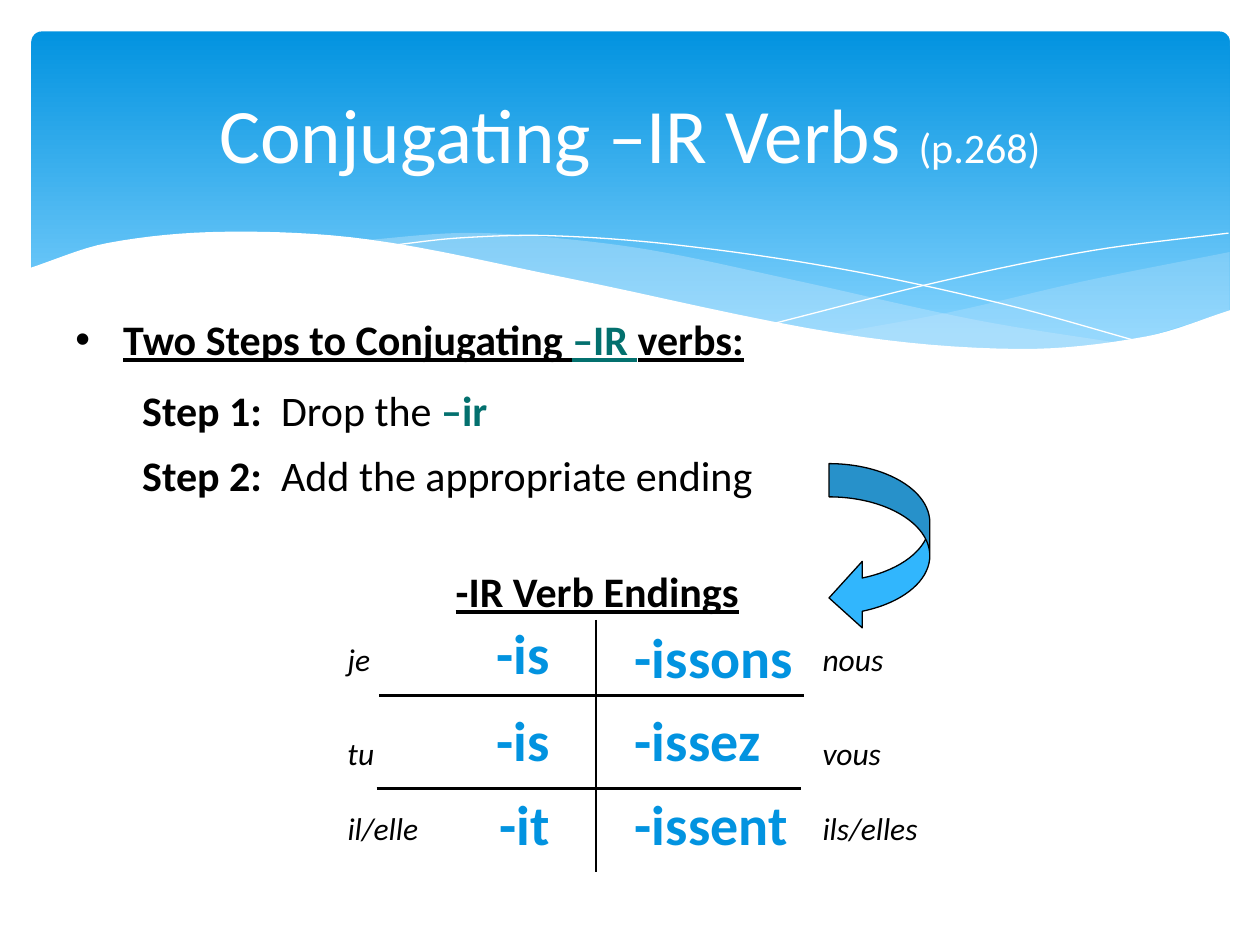
from typing import NamedTuple

from lxml import etree
from pptx import Presentation
from pptx.dml.color import RGBColor
from pptx.enum.shapes import MSO_CONNECTOR, MSO_SHAPE
from pptx.enum.text import MSO_ANCHOR, PP_ALIGN
from pptx.oxml.ns import qn
from pptx.util import Inches, Pt

LEFT, CENTER, RIGHT = PP_ALIGN.LEFT, PP_ALIGN.CENTER, PP_ALIGN.RIGHT
MIDDLE = MSO_ANCHOR.MIDDLE
ROUNDED, CURVED_ARROW = MSO_SHAPE.ROUNDED_RECTANGLE, MSO_SHAPE.CURVED_LEFT_ARROW
STRAIGHT = MSO_CONNECTOR.STRAIGHT

FONT = "Calibri"
WHITE, BLACK, TEAL = "FFFFFF", "000000", "03706E"
BLUE, SKY, PALE, ARROW_BLUE = "0293E0", "83D3FE", "C6E7FC", "31B6FD"
CURVE_STEPS = 8

Point = tuple[float, float]


class Span(NamedTuple):
    text: str
    size: int = 24
    color: str = BLACK
    bold: bool = False
    italic: bool = False
    underline: bool = False


class Wave(NamedTuple):
    """Smooth edges, each given by the knots it runs through."""
    edges: list[list[Point]]
    fill: str | None = None
    alpha: int = 100


class Pronoun(NamedTuple):
    text: str
    width: float
    ending: str
    ending_top: float


class Row(NamedTuple):
    pronoun_top: float
    singular: Pronoun
    plural: Pronoun


WAVES = [
    Wave([[(9.76, 2), (8.61, 2.23), (7.53, 2.48), (6.61, 2.65)],
          [(6.61, 2.65), (7.45, 2.75), (8.14, 2.78), (8.89, 2.72), (9.76, 2.47)]], PALE, 29),
    Wave([[(8.93, 2.73), (7.75, 2.54), (6.29, 2.22), (5.14, 1.98), (4.2, 1.87),
           (3.61, 1.85), (2.86, 1.91)],
          [(2.86, 1.91), (4.49, 2.22), (6.01, 2.55), (7.22, 2.74), (8.07, 2.78),
           (8.93, 2.73)]], PALE, 40),
    Wave([[(3.09, 1.95), (3.63, 1.89), (4.33, 1.87), (5.33, 1.94), (6.65, 2.13),
           (7.95, 2.41), (9.07, 2.72)]]),
    Wave([[(6.13, 2.57), (7.48, 2.23), (8.66, 1.99), (9.75, 1.85)]]),
    Wave([[(9.77, 2.46), (9.1, 2.67), (8.09, 2.77), (6.68, 2.65), (4.47, 2.2),
           (2.92, 1.9), (1.77, 1.84), (0.85, 1.93), (0.23, 2.13)],
          [(0.23, 3.29), (9.77, 3.29)]], WHITE),
]

ROWS = [
    Row(5.03, Pronoun("je", 0.39, "-is", 4.86), Pronoun("nous", 0.74, "-issons", 4.89)),
    Row(5.78, Pronoun("tu", 0.44, "-is", 5.55), Pronoun("vous", 0.73, "-issez", 5.55)),
    Row(6.37, Pronoun("il/elle", 0.85, "-it", 6.22), Pronoun("ils/elles", 1.07, "-issent", 6.22)),
]

GRID_LINES = [(4.73, 4.92, 4.73, 6.92), (3.01, 5.52, 6.38, 5.52), (2.99, 6.26, 6.36, 6.26)]


def rgb(color: str) -> RGBColor:
    return RGBColor.from_string(color)


def add_text(slide, left: float, top: float, width: float, height: float,
             spans: list[Span], align=LEFT, wrap: bool = True):
    box = slide.shapes.add_textbox(Inches(left), Inches(top), Inches(width), Inches(height))
    frame = box.text_frame
    frame.word_wrap = wrap
    paragraph = frame.paragraphs[0]
    paragraph.alignment = align
    for span in spans:
        run = paragraph.add_run()
        run.text = span.text
        font = run.font
        font.name, font.size = FONT, Pt(span.size)
        font.bold, font.italic, font.underline = span.bold, span.italic, span.underline
        font.color.rgb = rgb(span.color)
    return frame


def add_bullet(paragraph, indent: float) -> None:
    properties = paragraph._p.get_or_add_pPr()
    properties.set("marL", str(Inches(indent)))
    properties.set("indent", str(-Inches(indent)))
    etree.SubElement(properties, qn("a:buFont"), typeface="Arial")
    etree.SubElement(properties, qn("a:buChar"), char="•")


def smooth(knots: list[Point]) -> list[Point]:
    """Sample a curve through the knots, its tangents taken from their neighbours."""
    last = len(knots) - 1
    tangents = []
    for i in range(last + 1):
        before, after = max(i - 1, 0), min(i + 1, last)
        span = knots[after][0] - knots[before][0]
        tangents.append((knots[after][1] - knots[before][1]) / span)
    curve = [knots[0]]
    for i in range(last):
        (x0, y0), (x1, y1) = knots[i], knots[i + 1]
        run = x1 - x0
        for step in range(1, CURVE_STEPS + 1):
            t = step / CURVE_STEPS
            ease = t * t * (3 - 2 * t)
            bend = t * (1 - t) * ((1 - t) * tangents[i] - t * tangents[i + 1])
            curve.append((x0 + t * run, y0 + ease * (y1 - y0) + run * bend))
    return curve


def add_wave(slide, wave: Wave) -> None:
    outline = [(Inches(x), Inches(y)) for edge in wave.edges for x, y in smooth(edge)]
    builder = slide.shapes.build_freeform(*outline[0], scale=1.0)
    builder.add_line_segments(outline[1:], close=wave.fill is not None)
    ribbon = builder.convert_to_shape()
    ribbon.shadow.inherit = False
    if wave.fill is None:
        ribbon.fill.background()
        ribbon.line.color.rgb = rgb(WHITE)
        ribbon.line.width = Pt(0)
        return
    ribbon.fill.solid()
    ribbon.fill.fore_color.rgb = rgb(wave.fill)
    ribbon.line.fill.background()
    if wave.alpha < 100:
        color = ribbon._element.spPr.find(qn("a:solidFill"))[0]
        etree.SubElement(color, qn("a:alpha"), val=str(wave.alpha * 1000))


def add_banner(slide) -> None:
    banner = slide.shapes.add_shape(ROUNDED, Inches(0.25), Inches(0.25), Inches(9.51), Inches(2.7))
    banner.adjustments[0] = 0.03
    banner.shadow.inherit = False
    banner.line.fill.background()
    banner.fill.gradient()
    banner.fill.gradient_angle = 270
    for stop, color, position in zip(banner.fill.gradient_stops, (BLUE, SKY), (0, 0.9)):
        stop.color.rgb = rgb(color)
        stop.position = position


def add_grid_line(slide, x1: float, y1: float, x2: float, y2: float) -> None:
    rule = slide.shapes.add_connector(STRAIGHT, Inches(x1), Inches(y1), Inches(x2), Inches(y2))
    rule.line.color.rgb = rgb(BLACK)
    rule.line.width = Pt(1.5)
    etree.SubElement(rule._element.spPr, qn("a:effectLst"))


def add_curved_arrow(slide) -> None:
    arrow = slide.shapes.add_shape(CURVED_ARROW, Inches(6.58), Inches(3.68), Inches(0.8), Inches(1.33))
    for index, value in enumerate((0.33, 0.66, 0.33)):
        arrow.adjustments[index] = value
    arrow.shadow.inherit = False
    arrow.fill.solid()
    arrow.fill.fore_color.rgb = rgb(ARROW_BLUE)
    arrow.line.color.rgb = rgb(BLACK)
    arrow.line.width = Pt(0.75)


def add_row(slide, row: Row) -> None:
    for person, left, ending_left, ending_width, align in (
            (row.singular, 2.66, 2.99, 1.47, RIGHT), (row.plural, 6.43, 4.94, 1.67, LEFT)):
        add_text(slide, ending_left, person.ending_top, ending_width, 0.63,
                 [Span(person.ending, 32, BLUE, bold=True)], align)
        add_text(slide, left, row.pronoun_top, person.width, 0.4,
                 [Span(person.text, 18, italic=True)], wrap=False)


def main() -> None:
    prs = Presentation()
    prs.slide_width, prs.slide_height = Inches(10), Inches(7.5)
    slide = prs.slides.add_slide(prs.slide_layouts[6])

    # Banner with waves
    add_banner(slide)
    for wave in WAVES:
        add_wave(slide, wave)
    title = add_text(slide, 0.5, 0.37, 9, 1.37,
                     [Span("Conjugating –IR Verbs ", 44, WHITE), Span("(p.268)", 24, WHITE)], CENTER)
    title.vertical_anchor = MIDDLE

    # Two steps
    heading = add_text(slide, 0.5, 2.44, 9, 0.73, [
        Span("Two Steps to Conjugating ", bold=True, underline=True),
        Span("–IR ", color=TEAL, bold=True, underline=True),
        Span("verbs:", bold=True, underline=True)])
    add_bullet(heading.paragraphs[0], 0.38)
    add_text(slide, 1.03, 3, 2.99, 0.5, [
        Span("Step 1:", bold=True), Span("  Drop the "),
        Span("–ir", color=TEAL, bold=True)], wrap=False)
    add_text(slide, 1.03, 3.52, 5.58, 0.5, [
        Span("Step 2:", bold=True), Span("  Add the appropriate ending")], wrap=False)
    add_curved_arrow(slide)

    # Endings chart
    for ends in GRID_LINES:
        add_grid_line(slide, *ends)
    add_text(slide, 3.08, 4.44, 3.32, 0.5,
             [Span("-IR Verb Endings", bold=True, underline=True)], CENTER)
    for row in ROWS:
        add_row(slide, row)

    prs.save("out.pptx")


if __name__ == "__main__":
    main()
